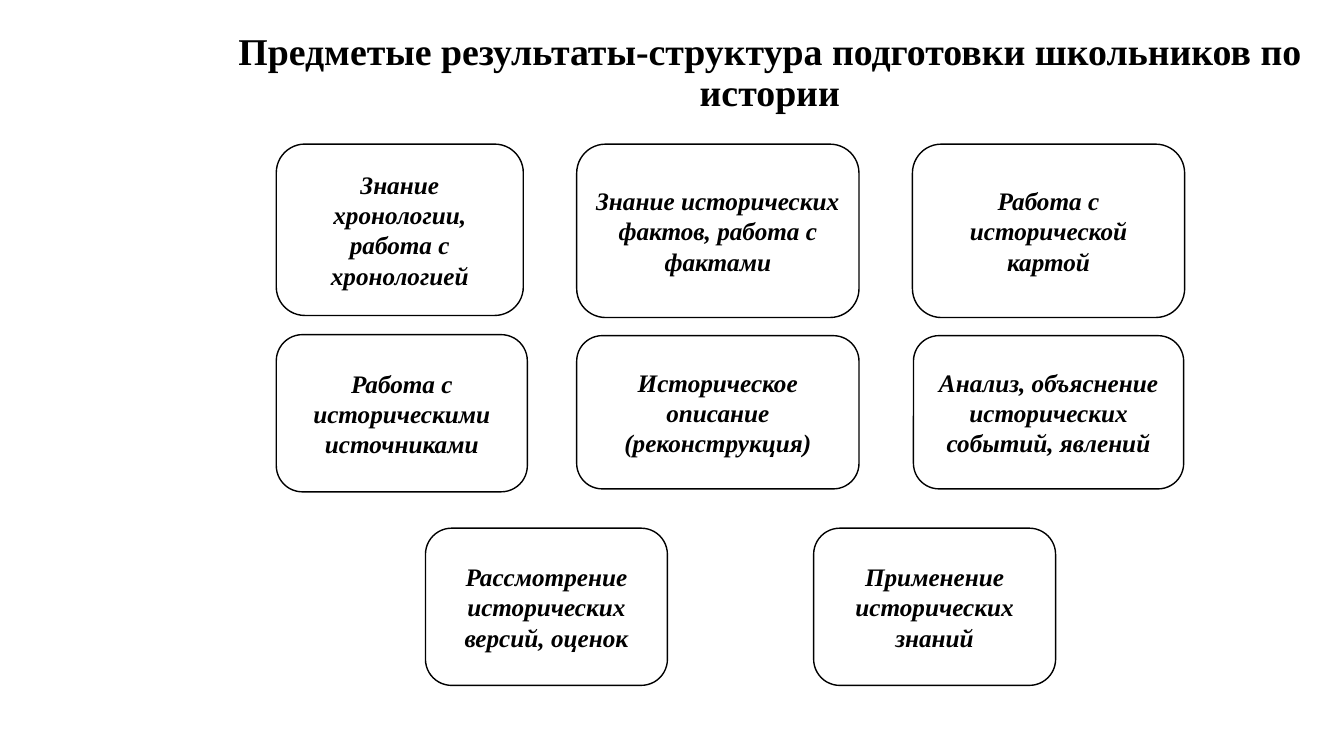
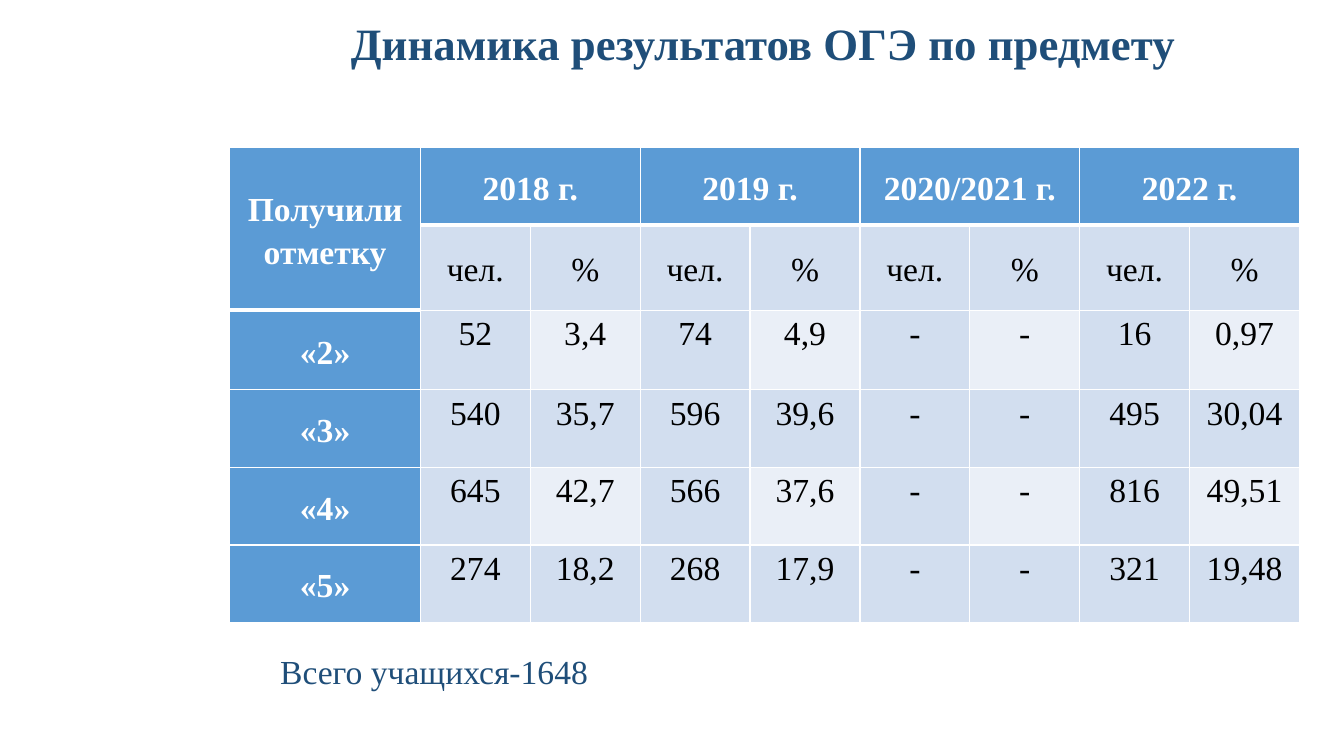
from dataclasses import dataclass

from lxml.etree import SubElement
from pptx import Presentation
from pptx.dml.color import RGBColor
from pptx.enum.shapes import MSO_SHAPE
from pptx.enum.text import MSO_ANCHOR, MSO_AUTO_SIZE, PP_ALIGN
from pptx.oxml.ns import qn
from pptx.util import Inches, Pt


@dataclass(frozen=True)
class Theme:
    font: str = "Times New Roman"
    black: str = "000000"
    white: str = "FFFFFF"
    navy: str = "1F4E79"
    header: str = "5B9BD5"
    band_dark: str = "D2DEEF"
    band_light: str = "EAEFF7"
    title_small: int = 27
    title_large: int = 32
    card_size: int = 18
    table_size: int = 24
    title_spacing: float = 0.9
    table_spacing: float = 1.15


THEME = Theme()

# Skills: text, left, top, width, height
SKILLS = [
    ("Знание хронологии, работа с хронологией", 2.74, 1.43, 2.45, 1.7),
    ("Знание исторических фактов, работа с фактами", 5.72, 1.43, 2.8, 1.72),
    ("Работа с исторической картой", 9.05, 1.43, 2.7, 1.72),
    ("Работа с историческими источниками", 2.74, 3.32, 2.49, 1.56),
    ("Историческое описание (реконструкция)", 5.72, 3.33, 2.8, 1.52),
    ("Анализ, объяснение исторических событий, явлений", 9.06, 3.33, 2.68, 1.52),
    ("Рассмотрение исторических версий, оценок", 4.22, 5.24, 2.4, 1.56),
    ("Применение исторических знаний", 8.07, 5.24, 2.4, 1.56),
]

# Exam results by mark: people and percent for each year
YEARS = ["2018 г.", "2019 г.", "2020/2021 г.", "2022 г."]
MARKS = [
    ["«2»", "52", "3,4", "74", "4,9", "-", "-", "16", "0,97"],
    ["«3»", "540", "35,7", "596", "39,6", "-", "-", "495", "30,04"],
    ["«4»", "645", "42,7", "566", "37,6", "-", "-", "816", "49,51"],
    ["«5»", "274", "18,2", "268", "17,9", "-", "-", "321", "19,48"],
]
ROW_HEIGHTS = [0.77, 0.7, 0.79, 0.77, 0.77, 0.77]
COLUMN_WIDTHS = [1.89] + [1.09] * 8


def rgb(color):
    return RGBColor.from_string(color)


def style_text(frame, size, color, bold=False, italic=False,
               align=PP_ALIGN.CENTER, spacing=None):
    for paragraph in frame.paragraphs:
        paragraph.alignment = align
        paragraph.line_spacing = spacing
        font = paragraph.font
        font.name, font.size = THEME.font, Pt(size)
        font.bold, font.italic = bold, italic
        font.color.rgb = rgb(color)


def add_titled_slide(deck, text, box, size, color):
    slide = deck.slides.add_slide(deck.slide_layouts[5])
    title = slide.shapes.title
    title.left, title.top, title.width, title.height = map(Inches, box)
    frame = title.text_frame
    frame.text = text
    frame.word_wrap = True
    frame.auto_size = MSO_AUTO_SIZE.NONE
    frame.vertical_anchor = MSO_ANCHOR.MIDDLE
    style_text(frame, size, color, bold=True, spacing=THEME.title_spacing)
    return slide


def add_card(slide, text, *box):
    card = slide.shapes.add_shape(MSO_SHAPE.ROUNDED_RECTANGLE, *map(Inches, box))
    card.shadow.inherit = False
    card.fill.solid()
    card.fill.fore_color.rgb = rgb(THEME.white)
    card.line.color.rgb = rgb(THEME.black)
    card.line.width = Pt(1)
    frame = card.text_frame
    frame.text = text
    frame.word_wrap = True
    frame.vertical_anchor = MSO_ANCHOR.MIDDLE
    style_text(frame, THEME.card_size, THEME.black, bold=True, italic=True)


def add_note(slide, text, *box):
    note = slide.shapes.add_textbox(*map(Inches, box))
    frame = note.text_frame
    frame.text = text
    frame.word_wrap = True
    style_text(frame, THEME.table_size, THEME.navy, align=PP_ALIGN.LEFT)


def set_borders(cell, top, bottom):
    properties = cell._tc.get_or_add_tcPr()
    for side, width in (("L", 1), ("R", 1), ("T", top), ("B", bottom)):
        line = SubElement(properties, qn(f"a:ln{side}"), w=str(Pt(width)))
        fill = SubElement(line, qn("a:solidFill"))
        SubElement(fill, qn("a:srgbClr"), val=THEME.white)


def rule_width(row, column):
    """Width of the rule under a cell: heavy below the header."""
    return 3 if row == 0 or (row == 1 and column == 0) else 1


def cell_fill(row, column):
    if row == 0 or column == 0:
        return THEME.header
    light = row in (2, 4) and column % 2 == 0
    return THEME.band_light if light else THEME.band_dark


def format_cell(cell, row, column):
    # Borders come before the fill in the cell properties
    set_borders(cell, rule_width(row - 1, column), rule_width(row, column))
    cell.fill.solid()
    cell.fill.fore_color.rgb = rgb(cell_fill(row, column))
    cell.margin_left = cell.margin_right = Inches(0.07)
    cell.margin_top = cell.margin_bottom = 0
    heading = row == 0 or column == 0
    centred = heading or row == 1
    cell.vertical_anchor = MSO_ANCHOR.MIDDLE if centred else MSO_ANCHOR.TOP
    style_text(cell.text_frame, THEME.table_size,
               THEME.white if heading else THEME.black,
               bold=heading, spacing=THEME.table_spacing)


def add_results_table(slide, left, top):
    year_row = ["Получили отметку"]
    for year in YEARS:
        year_row += [year, ""]
    rows = [year_row, [""] + ["чел.", "%"] * len(YEARS), *MARKS]

    results = slide.shapes.add_table(
        len(rows), len(COLUMN_WIDTHS), Inches(left), Inches(top),
        Inches(sum(COLUMN_WIDTHS)), Inches(sum(ROW_HEIGHTS))).table
    results.horz_banding = False
    for column, width in zip(results.columns, COLUMN_WIDTHS):
        column.width = Inches(width)
    for row, height in zip(results.rows, ROW_HEIGHTS):
        row.height = Inches(height)

    for r, values in enumerate(rows):
        for c, value in enumerate(values):
            cell = results.cell(r, c)
            cell.text = value
            format_cell(cell, r, c)

    # Header spans
    results.cell(0, 0).merge(results.cell(1, 0))
    for c in range(1, len(COLUMN_WIDTHS), 2):
        results.cell(0, c).merge(results.cell(0, c + 1))


def main():
    deck = Presentation()
    deck.slide_width, deck.slide_height = Inches(13.33), Inches(7.5)

    # Structure of history training
    skills_slide = add_titled_slide(
        deck, "Предметые результаты-структура подготовки школьников по истории",
        (1.94, 0.56, 11.39, 0.35), THEME.title_small, THEME.black)
    for skill in SKILLS:
        add_card(skills_slide, *skill)

    # Exam results over the years
    results_slide = add_titled_slide(
        deck, "Динамика результатов ОГЭ по предмету",
        (2.81, 0, 9.52, 0.92), THEME.title_large, THEME.navy)
    add_results_table(results_slide, 2.28, 1.46)
    add_note(results_slide, "Всего учащихся-1648", 2.68, 6.41, 3.99, 0.5)

    deck.save("out.pptx")


if __name__ == "__main__":
    main()
